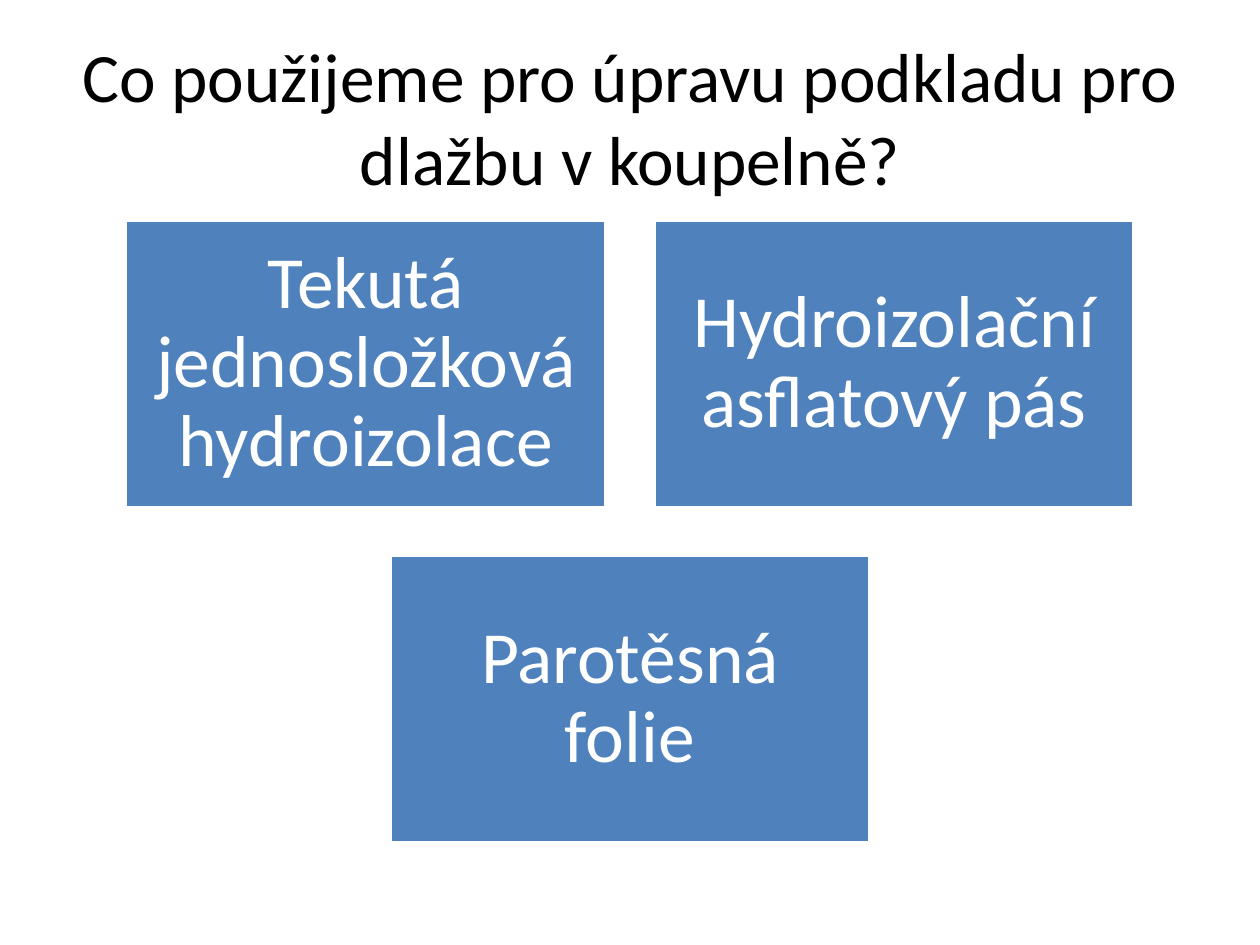
from pptx import Presentation
from pptx.dml.color import RGBColor
from pptx.enum.shapes import MSO_SHAPE
from pptx.enum.text import MSO_ANCHOR, MSO_AUTO_SIZE, PP_ALIGN
from pptx.util import Cm, Pt

RECT = MSO_SHAPE.RECTANGLE
MIDDLE = MSO_ANCHOR.MIDDLE
CENTER = PP_ALIGN.CENTER
NO_FIT = MSO_AUTO_SIZE.NONE


def color(code):
    return RGBColor.from_string(code)


def write(shape, text, size, code, inset, spacing):
    frame = shape.text_frame
    frame.text = text
    para = frame.paragraphs[0]
    formats = {
        frame: {"word_wrap": True, "auto_size": NO_FIT,
                "vertical_anchor": MIDDLE,
                "margin_left": inset, "margin_right": inset,
                "margin_top": inset, "margin_bottom": inset},
        para: {"alignment": CENTER, "line_spacing": spacing},
        para.font: {"name": "Calibri", "size": Pt(size)},
    }
    for part, values in formats.items():
        for name, value in values.items():
            setattr(part, name, value)
    para.font.color.rgb = color(code)


deck = Presentation()
deck.slide_width, deck.slide_height = Cm(25.4), Cm(19.05)
slide = deck.slides.add_slide(deck.slide_layouts[5])

# Title
title = slide.shapes.title
place = {"left": Cm(1.27), "top": Cm(0.76),
         "width": Cm(22.86), "height": Cm(3.18)}
for name, value in place.items():
    setattr(title, name, value)
write(title, "Co použijeme pro úpravu podkladu pro dlažbu v koupelně?",
      39.6, "000000", Cm(0.2), 1.0)

# Answer boxes: each row is centred on the slide
rows = [
    ["Tekutá jednosložková hydroizolace", "Hydroizolační asflatový pás"],
    ["Parotěsná folie"],
]
wide, high, gap = Cm(9.68), Cm(5.79), Cm(0.97)
top = Cm(4.44)
for row in rows:
    span = len(row) * (wide + gap) - gap
    left = (deck.slide_width - span) // 2
    for answer in row:
        box = slide.shapes.add_shape(RECT, left, top, wide, high)
        box.shadow.inherit = False
        box.fill.solid()
        box.fill.fore_color.rgb = color("4F81BD")
        box.line.color.rgb = color("FFFFFF")
        box.line.width = Pt(2)
        write(box, answer, 42, "FFFFFF", Cm(0.43), 0.9)
        left += wide + gap
    top += high + gap

deck.save("out.pptx")
